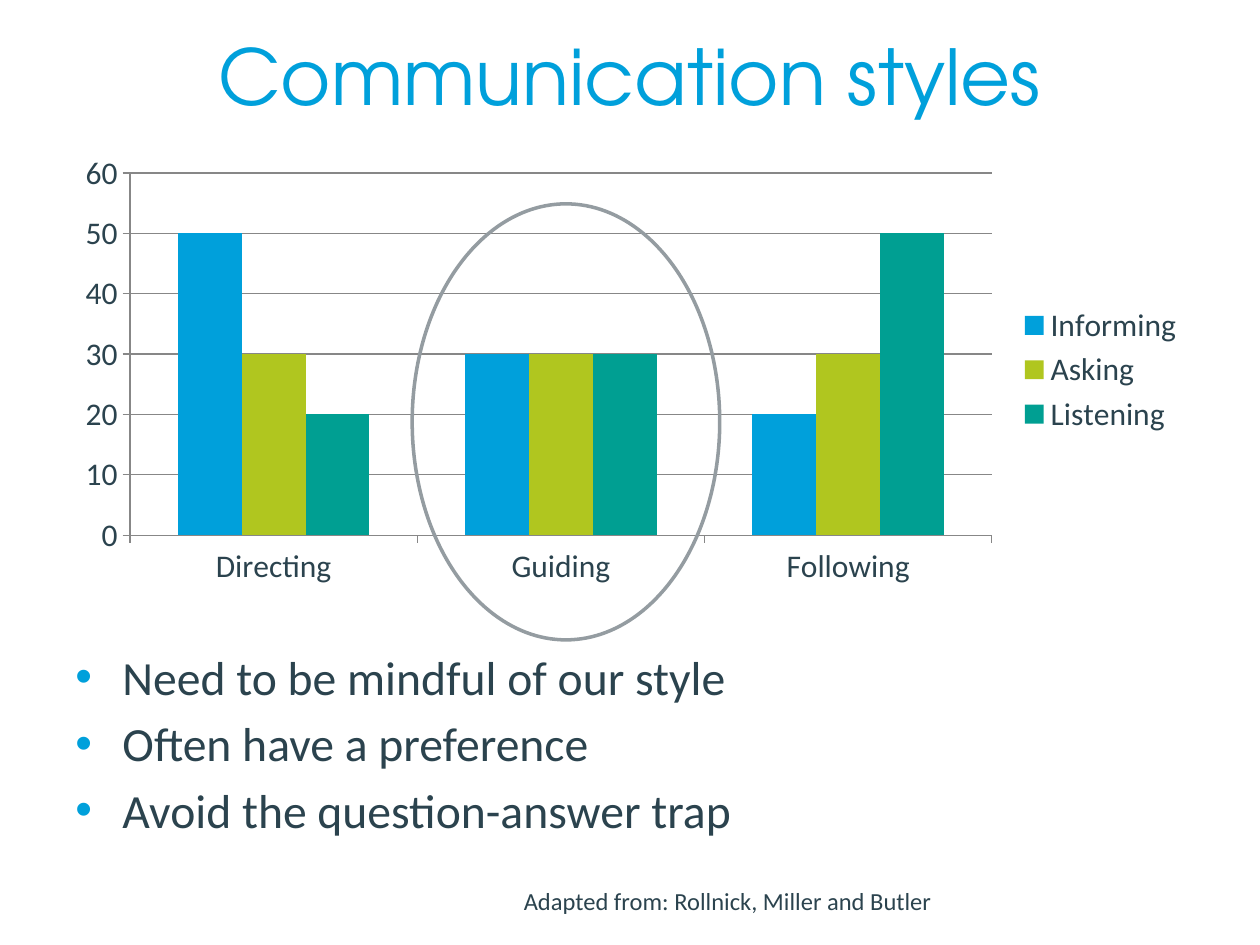
from lxml.etree import SubElement
from pptx import Presentation
from pptx.chart.data import CategoryChartData
from pptx.dml.color import RGBColor
from pptx.enum.chart import XL_CHART_TYPE as ChartType, XL_LEGEND_POSITION as LegendPosition
from pptx.enum.chart import XL_TICK_MARK as TickMark
from pptx.enum.shapes import MSO_SHAPE as Shape
from pptx.enum.text import MSO_ANCHOR as Anchor, PP_ALIGN as Align
from pptx.oxml.ns import qn
from pptx.util import Cm, Pt

COLORS = {
    "blue": "00A0DB",
    "green": "B0C61F",
    "teal": "009F92",
    "text": "2B434E",
    "grey": "949CA1",
    "axis": "878787",
}
BODY_FONT = "Calibri"
STYLES = ["Directing", "Guiding", "Following"]
SKILLS = [
    ("Informing", "blue", (50, 30, 20)),
    ("Asking", "green", (30, 30, 30)),
    ("Listening", "teal", (20, 30, 50)),
]
POINTS = [
    "Need to be mindful of our style",
    "Often have a preference",
    "Avoid the question-answer trap",
]


def rgb(name):
    return RGBColor.from_string(COLORS[name])


def format_font(font, size, color="text", name=BODY_FONT):
    for key, value in {"name": name, "size": Pt(size), "bold": False}.items():
        setattr(font, key, value)
    font.color.rgb = rgb(color)


def set_title(page, text):
    title = page.shapes.title
    place = {"left": Cm(1.27), "top": Cm(-0.08), "width": Cm(22.86), "height": Cm(3.18)}
    for key, value in place.items():
        setattr(title, key, value)
    frame = title.text_frame
    frame.text = text
    frame.vertical_anchor = Anchor.MIDDLE
    para = frame.paragraphs[0]
    para.alignment = Align.CENTER
    format_font(para.runs[0].font, 44, "blue", "TeX Gyre Adventor")


def add_style_chart(page, left, top, width, height):
    data = CategoryChartData()
    data.categories = STYLES
    for name, _, values in SKILLS:
        data.add_series(name, values)
    chart = page.shapes.add_chart(
        ChartType.COLUMN_CLUSTERED, left, top, width, height, data
    ).chart
    format_font(chart.font, 18)
    chart.has_title = False
    chart.has_legend = True
    chart.legend.position = LegendPosition.RIGHT
    chart.legend.include_in_layout = False

    plot = chart.plots[0]
    plot.gap_width = 150
    plot.overlap = 0
    plot.vary_by_categories = False
    for series, (_, color, _) in zip(plot.series, SKILLS):
        series.format.fill.solid()
        series.format.fill.fore_color.rgb = rgb(color)

    for axis in (chart.category_axis, chart.value_axis):
        axis.major_tick_mark = TickMark.OUTSIDE
        axis.minor_tick_mark = TickMark.NONE
        axis.format.line.color.rgb = rgb("axis")
    chart.value_axis.minimum_scale = 0
    chart.value_axis.maximum_scale = 60
    chart.value_axis.major_unit = 10
    chart.value_axis.major_gridlines.format.line.color.rgb = rgb("axis")


def add_text(page, left, top, width, height, lines, size):
    box = page.shapes.add_textbox(left, top, width, height)
    frame = box.text_frame
    frame.word_wrap = True
    for index, line in enumerate(lines):
        para = frame.paragraphs[0] if index == 0 else frame.add_paragraph()
        span = para.add_run()
        span.text = line
        format_font(span.font, size)
    return frame.paragraphs


def add_bullet(para, color, indent):
    """Give the paragraph a coloured bullet with a hanging indent."""
    props = para._p.get_or_add_pPr()
    props.set("marL", str(indent))
    props.set("indent", str(-indent))
    bullet_color = SubElement(props, qn("a:buClr"))
    SubElement(bullet_color, qn("a:srgbClr"), val=COLORS[color])
    SubElement(props, qn("a:buFont"), typeface="Arial")
    SubElement(props, qn("a:buChar"), char="•")


def add_bullet_list(page, left, top, width, height, lines):
    paragraphs = add_text(page, left, top, width, height, lines, 27.2)
    for index, para in enumerate(paragraphs):
        add_bullet(para, "blue", Cm(0.95))
        para.space_before = Pt(5.4 if index else 0)


def add_highlight_ring(page, left, top, width, height):
    ring = page.shapes.add_shape(Shape.OVAL, left, top, width, height)
    ring.shadow.inherit = False
    ring.fill.background()
    ring.line.color.rgb = rgb("grey")
    ring.line.width = Pt(2)


def main():
    deck = Presentation()
    deck.slide_width, deck.slide_height = Cm(25.4), Cm(19.05)
    page = deck.slides.add_slide(deck.slide_layouts[5])
    set_title(page, "Communication styles")
    add_style_chart(page, Cm(1.27), Cm(2.92), Cm(22.86), Cm(9.07))
    add_text(page, Cm(10.31), Cm(17.73), Cm(14.81), Cm(0.86),
             ["Adapted from: Rollnick, Miller and Butler"], 14)
    add_bullet_list(page, Cm(1.27), Cm(12.93), Cm(22.86), Cm(3.81), POINTS)
    add_highlight_ring(page, Cm(8.31), Cm(4.11), Cm(6.2), Cm(8.79))
    deck.save("out.pptx")


if __name__ == "__main__":
    main()
